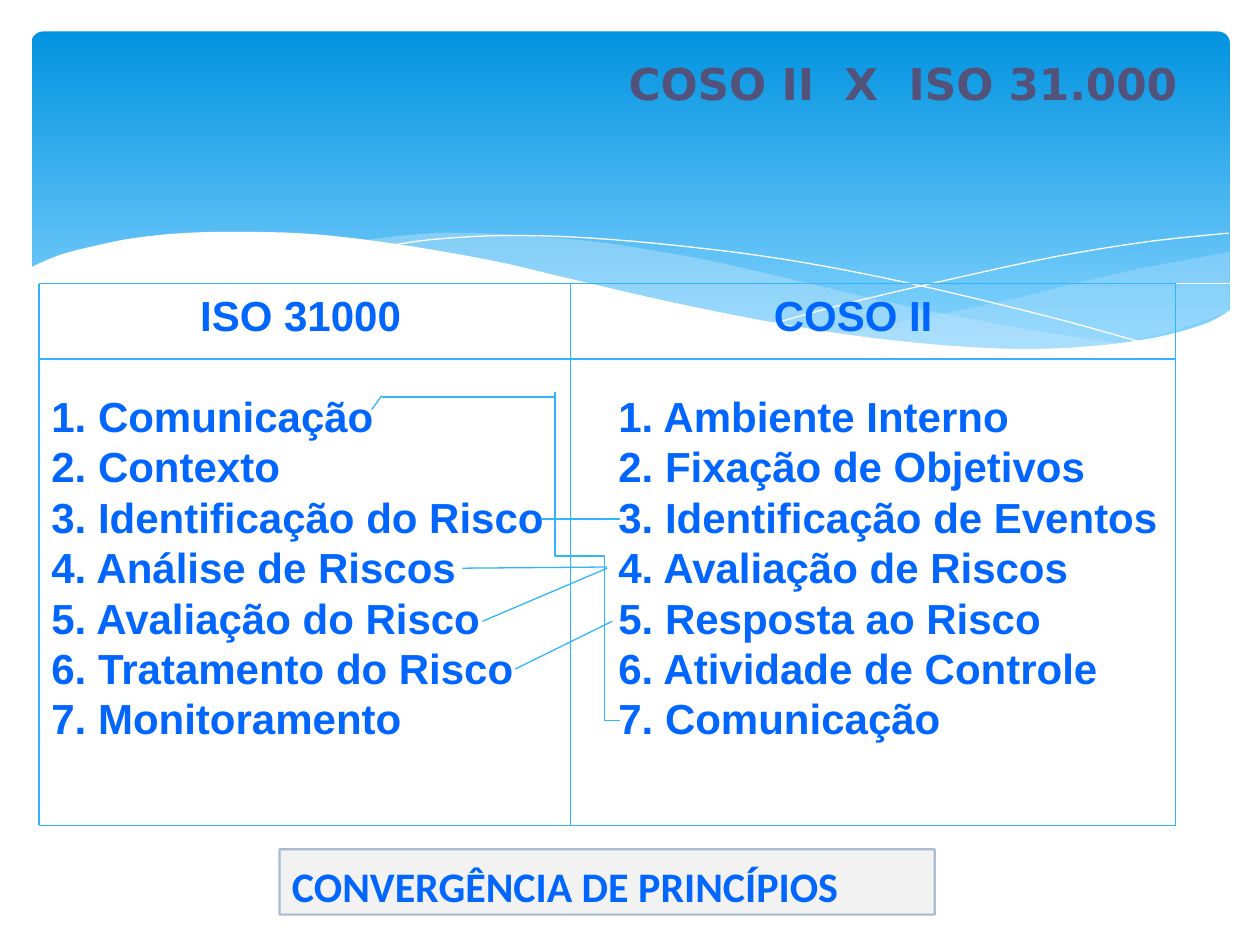
import pptx
import pptx.dml.color
import pptx.enum.shapes
import pptx.enum.text
import pptx.oxml
import pptx.oxml.ns
import pptx.util
from lxml import etree

Pt = pptx.util.Pt
COLORS = {
    "sky": "0293E0", "pale_sky": "83D3FE", "mist": "C6E7FC", "white": "FFFFFF",
    "text": "0066FF", "rule": "31B6FD", "title": "52527A",
    "panel": "F2F2F2", "panel_line": "315D95",
}

WAVE_TOP = [(16.6, 153.4), (25.9, 149), (37.4, 144.7), (54.7, 140.4), (76.3, 136.1),
            (105, 133.2), (139, 132.5), (180, 133.9), (228, 139.7), (281.5, 149),
            (321.8, 158.4), (380.9, 172.1), (434.2, 182.9), (481, 190.8),
            (522.7, 195.8), (560.2, 198.7), (592.6, 199.4), (621.4, 198),
            (647.3, 195.1), (669.6, 190.8), (690.5, 184.3), (703.4, 177.1)]
RIGHT_TOP = [(702.7, 144), (682.6, 147.6), (652.3, 153.4), (619.9, 160.6),
             (579.6, 170.6), (524.9, 182.2), (475.9, 190.8)]
RIGHT_BOTTOM = [(475.9, 190.8), (517.7, 195.8), (553.7, 198.7), (586, 199.4),
                (614.9, 198.7), (640.8, 195.8), (663.1, 191), (683.3, 185), (702.7, 177.8)]
MIDDLE_TOP = [(643, 196.6), (602.6, 190.8), (558, 182.9), (508.3, 172.8),
              (452.9, 159.8), (409.7, 149.8), (370, 142.6), (334.8, 137.5),
              (287.3, 133.9), (247.7, 133.2), (206, 137.5)]
MIDDLE_BOTTOM = [(206, 137.5), (246.2, 143.3), (290.9, 151.9), (353.5, 167),
                 (407.5, 178.6), (456.5, 187.9), (500.4, 194.4), (538.6, 198.7),
                 (573.1, 200.2), (610.6, 199.4), (643, 196.6)]
FALLING_LINE = [(222.5, 140.4), (247.7, 136.8), (288.7, 134.6), (338.4, 136.1),
                (400.3, 141.8), (457.9, 149.8), (523.4, 162.7), (598.3, 180.7), (653, 195.8)]
RISING_LINE = [(441.4, 185), (483.8, 173.5), (538.6, 160.6), (601.9, 146.9),
               (655.2, 138.2), (702, 133.2)]

LEFT, DIVIDER, RIGHT = 22.3, 326.2, 671.8
TOP, HEADER_BOTTOM, BOTTOM = 162, 205.2, 471.6
LINE_PITCH = 28.8
ROWS = [
    ("1. Comunicação", "1. Ambiente Interno"),
    ("2. Contexto", "2. Fixação de Objetivos"),
    ("3. Identificação do Risco", "3. Identificação de Eventos"),
    ("4. Análise de Riscos", "4. Avaliação de Riscos"),
    ("5. Avaliação do Risco", "5. Resposta ao Risco"),
    ("6. Tratamento do Risco", "6. Atividade de Controle"),
    ("7. Monitoramento", "7. Comunicação"),
]
LINKS = [
    (316.8, 226.8, 218.2, 226.8), (218.2, 226.1, 212.4, 234),
    (354.2, 411.8, 344.9, 411.8), (308.9, 296.6, 354.2, 296.6),
    (275.8, 355, 347, 324.7), (294.5, 382.3, 349.9, 355), (264.2, 324.7, 347, 324),
]


def rgb(name):
    return pptx.dml.color.RGBColor.from_string(COLORS[name])


def set_alpha(fill, percent):
    color = fill._xPr.find(".//" + pptx.oxml.ns.qn("a:srgbClr"))
    etree.SubElement(color, pptx.oxml.ns.qn("a:alpha"), val=str(percent * 1000))


def paint(shape, fill=None, line=None, width=0.75, alpha=None):
    shape.shadow.inherit = False
    if fill:
        shape.fill.solid()
        shape.fill.fore_color.rgb = rgb(fill)
        if alpha:
            set_alpha(shape.fill, alpha)
    else:
        shape.fill.background()
    if line:
        shape.line.color.rgb = rgb(line)
        shape.line.width = Pt(width)
    else:
        shape.line.fill.background()


def smooth(points, steps=5):
    """Return points of a Catmull-Rom curve through the given points."""
    padded = [points[0], *points, points[-1]]
    curve = [points[0]]
    for a, b, c, d in zip(padded, padded[1:], padded[2:], padded[3:]):
        for step in range(1, steps + 1):
            t = step / steps
            curve.append(tuple(
                (2 * q + (r - p) * t + (2 * p - 5 * q + 4 * r - s) * t ** 2
                 + (3 * q - p - 3 * r + s) * t ** 3) / 2
                for p, q, r, s in zip(a, b, c, d)))
    return curve


def add_curve(slide, points, close=True, **style):
    points = [(Pt(x), Pt(y)) for x, y in points]
    builder = slide.shapes.build_freeform(*points[0])
    builder.add_line_segments(points[1:], close=close)
    paint(builder.convert_to_shape(), **style)


def add_box(slide, kind, left, top, width, height):
    return slide.shapes.add_shape(kind, Pt(left), Pt(top), Pt(width), Pt(height))


def add_rule(slide, x1, y1, x2, y2, kind=pptx.enum.shapes.MSO_CONNECTOR.STRAIGHT):
    rule = slide.shapes.add_connector(kind, Pt(x1), Pt(y1), Pt(x2), Pt(y2))
    rule.line.color.rgb = rgb("rule")
    rule.line.width = Pt(0.75)
    etree.SubElement(rule._element.spPr, pptx.oxml.ns.qn("a:effectLst"))
    return rule


def write(paragraph, text, font, size, color):
    paragraph.text = text
    paragraph.alignment = pptx.enum.text.PP_ALIGN.LEFT
    for run in paragraph.runs:
        run.font.name = font
        run.font.size = Pt(size)
        run.font.bold = True
        run.font.color.rgb = rgb(color)


def set_tabs(paragraph, *stops):
    tabs = etree.SubElement(paragraph._p.get_or_add_pPr(), pptx.oxml.ns.qn("a:tabLst"))
    for stop in stops:
        etree.SubElement(tabs, pptx.oxml.ns.qn("a:tab"), pos=str(Pt(stop)), algn="l")


def add_banner(slide):
    banner = add_box(slide, pptx.enum.shapes.MSO_SHAPE.ROUNDED_RECTANGLE, 18, 18, 684.7, 194.4)
    banner.adjustments[0] = 0.034
    paint(banner)
    banner.fill.gradient()
    banner.fill.gradient_angle = 270
    for stop, position, color in zip(banner.fill.gradient_stops, (0, 0.9), ("sky", "pale_sky")):
        stop.position = position
        stop.color.rgb = rgb(color)
    add_curve(slide, smooth(RIGHT_TOP) + smooth(RIGHT_BOTTOM), fill="mist", alpha=29)
    add_curve(slide, smooth(MIDDLE_TOP) + smooth(MIDDLE_BOTTOM), fill="mist", alpha=40)
    for points in (FALLING_LINE, RISING_LINE):
        add_curve(slide, smooth(points), close=False, line="white", width=0)
    add_curve(slide, smooth(WAVE_TOP) + [(703.4, 236.9), (16.6, 236.9)], fill="white")


def add_comparison(slide):
    box = add_box(slide, pptx.enum.shapes.MSO_SHAPE.RECTANGLE, LEFT, TOP, 686.9, 269.3)
    paint(box, line="white")
    frame = box.text_frame
    frame.word_wrap = True
    frame.vertical_anchor = pptx.enum.text.MSO_ANCHOR.TOP
    lines = ["\tISO 31000\tCOSO II"] + ["\t".join(row) for row in ROWS]
    for index, line in enumerate(lines):
        paragraph = frame.add_paragraph() if index else frame.paragraphs[0]
        write(paragraph, line, "Arial", 24, "text")
        paragraph.line_spacing = Pt(LINE_PITCH)
        paragraph.space_before = Pt(LINE_PITCH if index == 1 else 0)
        set_tabs(paragraph, *((324,) if index else (85, 412.8)))
    for x in (LEFT, DIVIDER, RIGHT):
        add_rule(slide, x, TOP, x, BOTTOM)
    for y in (TOP, HEADER_BOTTOM, BOTTOM):
        add_rule(slide, LEFT, y, RIGHT, y)


def add_links(slide):
    elbow = add_rule(slide, 237.6, 331.9, 424.8, 303.8, pptx.enum.shapes.MSO_CONNECTOR.ELBOW)
    elbow._element.spPr.xfrm.set("rot", str(270 * 60000))
    for link in LINKS:
        add_rule(slide, *link)


def add_conclusion(slide):
    panel = add_box(slide, pptx.enum.shapes.MSO_SHAPE.RECTANGLE, 159.8, 485.3, 374.4, 37.4)
    paint(panel, fill="panel", line="panel_line", width=1.25)
    set_alpha(panel.line.fill, 40)
    panel.text_frame.vertical_anchor = pptx.enum.text.MSO_ANCHOR.TOP
    paragraph = panel.text_frame.paragraphs[0]
    write(paragraph, "CONVERGÊNCIA DE PRINCÍPIOS", "Calibri", 24, "text")
    paragraph.line_spacing = 1.1


def add_title(slide):
    title = slide.shapes.add_textbox(Pt(352.1), Pt(28.8), Pt(352.1), Pt(37.4))
    title.text_frame.word_wrap = False
    write(title.text_frame.paragraphs[0], "COSO II  X  ISO 31.000", "DejaVu Sans", 25, "title")


def main():
    presentation = pptx.Presentation()
    presentation.slide_width, presentation.slide_height = Pt(720), Pt(540)
    slide = presentation.slides.add_slide(presentation.slide_layouts[6])
    add_banner(slide)
    add_comparison(slide)
    add_conclusion(slide)
    add_links(slide)
    add_title(slide)
    presentation.save("out.pptx")


if __name__ == "__main__":
    main()
